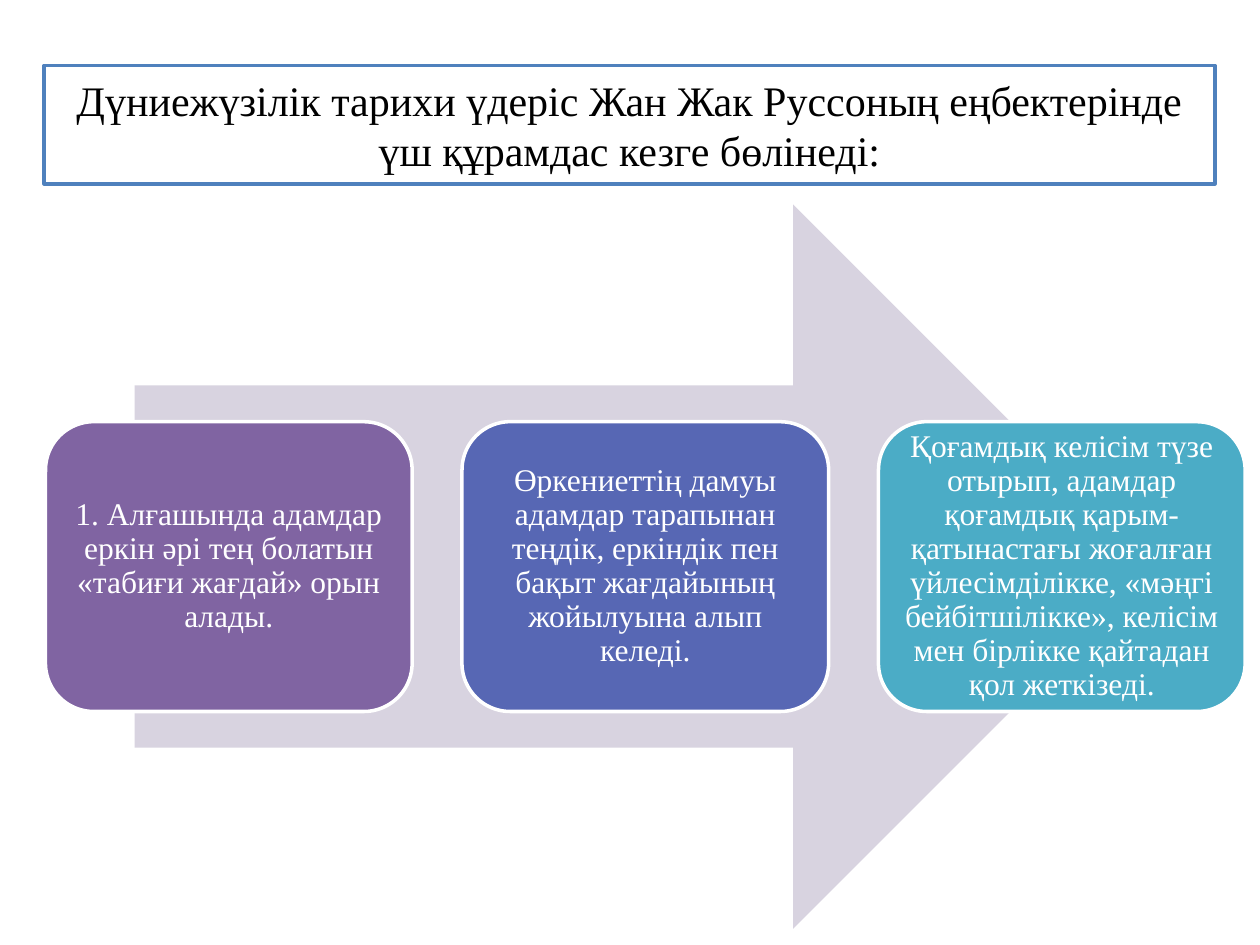
from pptx import Presentation
from pptx import util as u
from pptx.dml import color as c
from pptx.enum import shapes, text

WHITE = c.RGBColor(0xFF, 0xFF, 0xFF)
BLACK = c.RGBColor(0, 0, 0)
BLUE = c.RGBColor(0x4F, 0x81, 0xBD)
PALE = c.RGBColor(0xD8, 0xD3, 0xE0)
PURPLE = c.RGBColor(0x80, 0x64, 0xA2)
INDIGO = c.RGBColor(0x57, 0x67, 0xB4)
TEAL = c.RGBColor(0x4B, 0xAC, 0xC6)

TITLE = "Дүниежүзілік тарихи үдеріс Жан Жак Руссоның еңбектерінде үш құрамдас кезге бөлінеді:"
STAGES = [
    (PURPLE, "1. Алғашында адамдар еркін әрі тең болатын «табиғи жағдай» орын алады."),
    (INDIGO, "Өркениеттің дамуы адамдар тарапынан теңдік, еркіндік пен бақыт "
             "жағдайының жойылуына алып келеді."),
    (TEAL, "Қоғамдық келісім түзе отырып, адамдар қоғамдық қарым-қатынастағы "
           "жоғалған үйлесімділікке, «мәңгі бейбітшілікке», келісім мен "
           "бірлікке қайтадан қол жеткізеді."),
]


class Deck:
    font = "Times New Roman"
    edge = u.Pt(2)

    def __init__(self, wide, high):
        self.file = Presentation()
        self.file.slide_width, self.file.slide_height = u.Pt(wide), u.Pt(high)
        self.slide = self.file.slides.add_slide(self.file.slide_layouts[6])

    def shape(self, kind, box, fill, line=None):
        item = self.slide.shapes.add_shape(kind, *map(u.Pt, box))
        item.shadow.inherit = False
        item.fill.solid()
        item.fill.fore_color.rgb = fill
        if line is None:
            item.line.fill.background()
        else:
            item.line.color.rgb = line
            item.line.width = self.edge
        return item

    def label(self, item, words, size, ink, space=1.0):
        frame = item.text_frame
        frame.word_wrap = True
        frame.vertical_anchor = text.MSO_ANCHOR.MIDDLE
        para = frame.paragraphs[0]
        para.alignment = text.PP_ALIGN.CENTER
        para.line_spacing = space
        run = para.add_run()
        run.text = words
        run.font.name = self.font
        run.font.size = u.Pt(size)
        run.font.color.rgb = ink

    def arrow(self, box, fill):
        self.shape(shapes.MSO_SHAPE.RIGHT_ARROW, box, fill)

    def title(self, box, words):
        item = self.shape(shapes.MSO_SHAPE.RECTANGLE, box, WHITE, BLUE)
        self.label(item, words, 24, BLACK)

    def card(self, box, fill, words):
        item = self.shape(shapes.MSO_SHAPE.ROUNDED_RECTANGLE, box, fill, WHITE)
        frame = item.text_frame
        frame.margin_left = frame.margin_right = u.Pt(5)
        frame.margin_top = frame.margin_bottom = u.Pt(5)
        self.label(item, words, 18, WHITE, 0.9)


def main():
    deck = Deck(720, 540)
    deck.arrow((77, 116.8, 583.2, 414), PALE)
    left, step = 26, 238
    for spot, (fill, words) in enumerate(STAGES):
        deck.card((left + spot * step, 241, 209.5, 165.6), fill, words)
    deck.title((25.2, 37.4, 669, 67.7), TITLE)
    deck.file.save("out.pptx")


if __name__ == "__main__":
    main()
